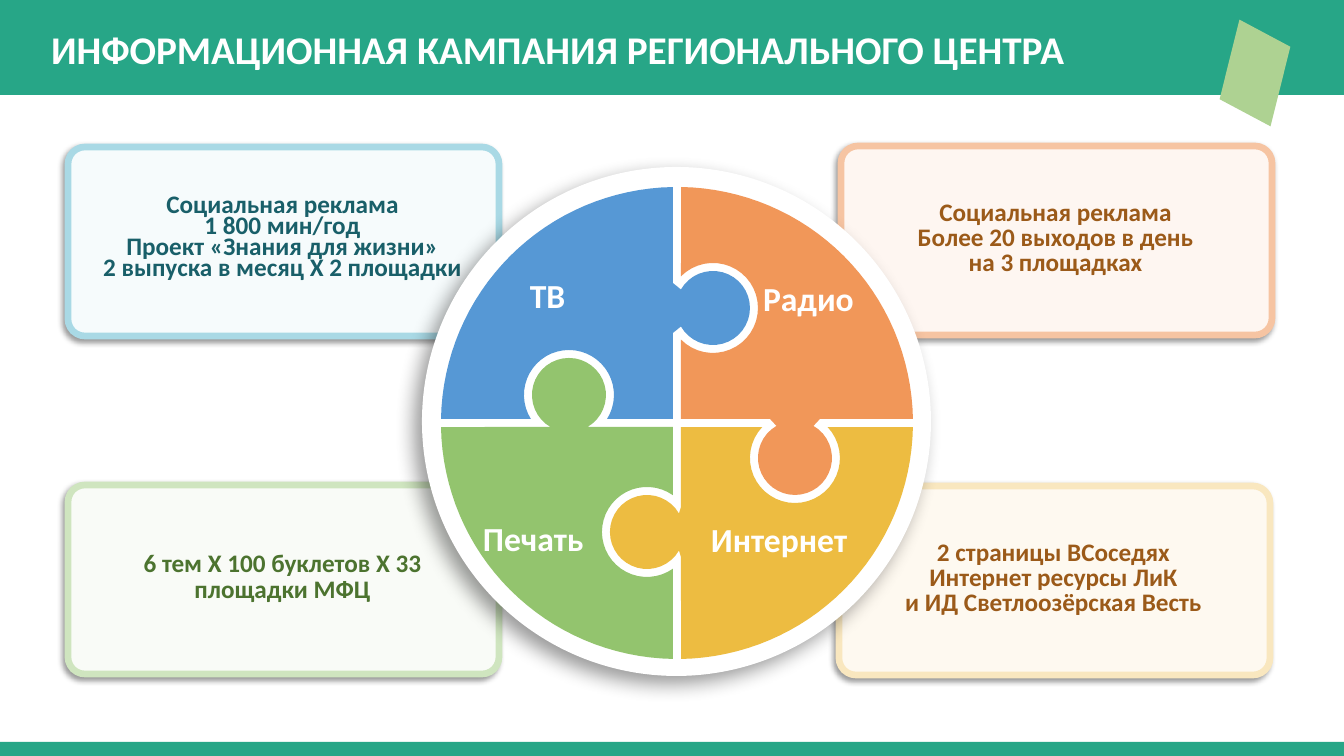
from math import asin, cos, degrees, radians, sin
from lxml.etree import SubElement
from pptx import Presentation
from pptx.dml.color import RGBColor
from pptx.enum.shapes import MSO_SHAPE
from pptx.enum.text import MSO_ANCHOR, MSO_AUTO_SIZE, PP_ALIGN
from pptx.oxml.ns import qn
from pptx.util import Pt

PX = 914400 / 100.8
LEFT, MID = PP_ALIGN.LEFT, PP_ALIGN.CENTER


def tint(fill, color):
    fill.solid()
    fill.fore_color.rgb = RGBColor.from_string(color)


def write(frame, lines, size, color, align, pitch=None):
    frame.word_wrap = True
    frame.auto_size = MSO_AUTO_SIZE.NONE
    for i, line in enumerate(lines):
        para = frame.add_paragraph() if i else frame.paragraphs[0]
        para.alignment = align
        if pitch:
            para.line_spacing = Pt(pitch)
        run = para.add_run()
        run.text = line
        run.font.size = Pt(size)
        run.font.name = "Calibri"
        run.font.bold = True
        tint(run.font.fill, color)


deck = Presentation()
deck.slide_width = round(1344 * PX)
deck.slide_height = round(756 * PX)
slide = deck.slides.add_slide(deck.slide_layouts[5])
shapes = slide.shapes

for kind, at, color in [
    (MSO_SHAPE.RECTANGLE, (0, 742, 1344, 14), "27A687"),
    (MSO_SHAPE.RECTANGLE, (0, 0, 1344, 95), "27A687"),
    (MSO_SHAPE.PARALLELOGRAM, (1207, 45, 96, 56), "AED292"),
]:
    band = shapes.add_shape(kind, *[round(v * PX) for v in at])
    band.shadow.inherit = False
    tint(band.fill, color)
    band.line.fill.background()
band.rotation = 284

title = shapes.title
title.left, title.top, title.width, title.height = [
    round(v * PX) for v in (41, 20, 1268, 58)]
title.text_frame.vertical_anchor = MSO_ANCHOR.MIDDLE
write(title.text_frame, ["ИНФОРМАЦИОННАЯ КАМПАНИЯ РЕГИОНАЛЬНОГО ЦЕНТРА"],
      28, "FFFFFF", LEFT)
shapes.element.append(title.element)

cast = []
for x, y, color, edge, ink, pitch, lines in [
    (68, 147, "F6FBFC", "A9D9E5", "195F69", 15, [
        "Социальная реклама", "1 800 мин/год",
        "Проект «Знания для жизни»", "2 выпуска в месяц Х 2 площадки"]),
    (841, 146, "FEF6F1", "F6C4A2", "9B5A19", 18, [
        "Социальная реклама", "Более 20 выходов в день", "на 3 площадках"]),
    (68, 485, "F9FBF7", "CFE5BF", "4C732F", 18, [
        "6 тем Х 100 буклетов Х 33", "площадки МФЦ"]),
    (839, 486, "FEF9F0", "F9E7BF", "9B5A19", 18, [
        "2 страницы ВСоседях", "Интернет ресурсы ЛиК",
        "и ИД Светлоозёрская Весть"]),
]:
    panel = shapes.add_shape(MSO_SHAPE.ROUNDED_RECTANGLE,
                             *[round(v * PX) for v in (x, y, 431, 189)])
    panel.adjustments[0] = 0.09
    tint(panel.fill, color)
    tint(panel.line.fill, edge)
    panel.line.width = Pt(4.75)
    frame = panel.text_frame
    frame.margin_left, frame.margin_top, frame.margin_right, frame.margin_bottom = [
        round(v * PX) for v in (8, 2, 10, 5)]
    frame.vertical_anchor = MSO_ANCHOR.MIDDLE
    write(frame, lines, 18, ink, MID, pitch)
    cast.append((panel, 4, 3))

disc = shapes.add_shape(MSO_SHAPE.OVAL,
                        *[round(v * PX) for v in (422, 167, 509, 509)])
tint(disc.fill, "FFFFFF")
disc.line.fill.background()
cast.append((disc, 14, 8))

for shape, blur, dist in cast:
    shape.shadow.inherit = False
    glow = SubElement(
        shape.element.spPr.find(qn("a:effectLst")), qn("a:outerShdw"),
        blurRad=str(Pt(blur)), dist=str(Pt(dist)), dir=str(135 * 60000),
        algn="tr", rotWithShape="0")
    tone = SubElement(glow, qn("a:srgbClr"), val="000000")
    SubElement(tone, qn("a:alpha"), val="40000")

HUB_X, HUB_Y = 677, 423
RIM, GAP, KNOB, HOLE, NECK = 236, 4, 37, 45, 25
knobs = [(115, 36), (118, 35), (109, 30), (108, 28)]
parts = [
    ("5698D5", "ТВ", (513, 270, 69, 61), MID),
    ("F19759", "Радио", (740, 273, 137, 61), MID),
    ("EDBC41", "Интернет", (701, 514, 194, 61), LEFT),
    ("93C46E", "Печать", (473, 513, 149, 61), LEFT),
]
for turn, (color, name, at, align) in enumerate(parts):
    far, deep = knobs[turn]
    side, rise = knobs[turn - 1]
    tilt = degrees(asin((rise - GAP) / HOLE))
    arcs = [
        (-GAP, -GAP, 0, 0, 0),
        (-GAP, NECK - far, 0, 0, 0),
        (deep, -far, KNOB, 150, -150),
        (-GAP, -NECK - far, 0, 0, 0),
        (0, 0, RIM, 269, 181),
        (-side, -rise, HOLE, 180 - tilt, 360 + tilt),
    ]
    dots = []
    for cx, cy, size, start, stop in arcs:
        steps = 32 if size else 1
        for i in range(steps + 1 if size else 1):
            turned = radians(start + (stop - start) * i / steps)
            x, y = cx + size * cos(turned), cy + size * sin(turned)
            for _ in range(turn):
                x, y = -y, x
            dots.append((round((HUB_X + x) * PX), round((HUB_Y + y) * PX)))
    path = shapes.build_freeform(*dots[0])
    path.add_line_segments(dots[1:], close=True)
    piece = path.convert_to_shape()
    piece.shadow.inherit = False
    tint(piece.fill, color)
    piece.line.fill.background()
    label = shapes.add_textbox(*[round(v * PX) for v in at])
    write(label.text_frame, [name], 24, "FFFFFF", align)

deck.save("out.pptx")
